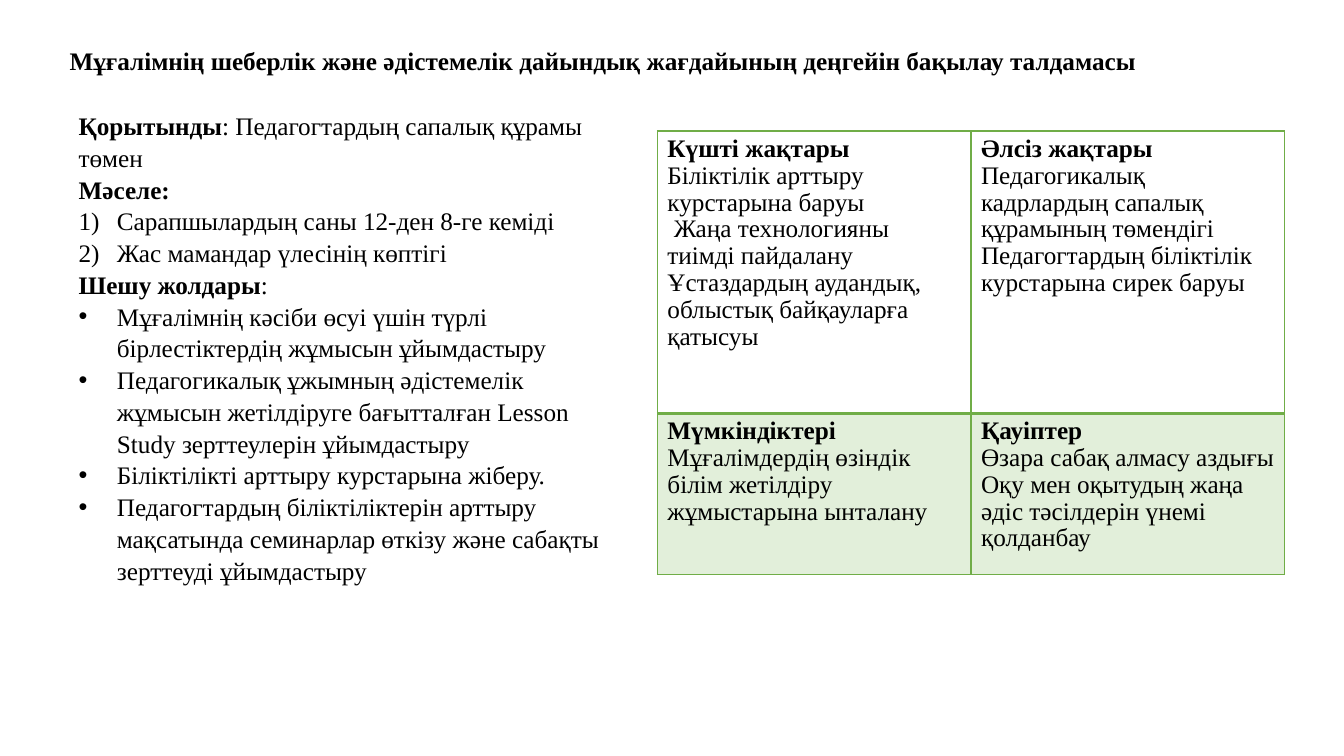
"""Builds a slide with findings on teacher skill levels and a four-part SWOT table."""
from lxml.etree import SubElement
from pptx import Presentation
from pptx.dml.color import RGBColor
from pptx.enum.text import MSO_ANCHOR, MSO_AUTO_SIZE, PP_ALIGN
from pptx.oxml import parse_xml
from pptx.oxml.ns import nsdecls, qn
from pptx.util import Inches, Pt

TITLE = "Мұғалімнің шеберлік және әдістемелік дайындық жағдайының деңгейін бақылау талдамасы"

FINDINGS = [
    ("plain", [("Қорытынды", True), (": Педагогтардың сапалық құрамы төмен", False)]),
    ("plain", [("Мәселе:", True)]),
    ("number", [("Сарапшылардың саны 12-ден 8-ге кеміді", False)]),
    ("number", [("Жас мамандар үлесінің көптігі", False)]),
    ("plain", [("Шешу жолдары", True), (":", False)]),
    ("bullet", [("Мұғалімнің кәсіби өсуі үшін түрлі бірлестіктердің жұмысын ұйымдастыру", False)]),
    ("bullet", [("Педагогикалық ұжымның әдістемелік жұмысын жетілдіруге бағытталған "
                 "Lesson Study зерттеулерін ұйымдастыру", False)]),
    ("bullet", [("Біліктілікті арттыру курстарына жіберу.", False)]),
    ("bullet", [("Педагогтардың біліктіліктерін арттыру мақсатында семинарлар өткізу "
                 "және сабақты зерттеуді ұйымдастыру", False)]),
]

SWOT = [
    [
        ("Күшті жақтары", [
            "Біліктілік арттыру курстарына баруы",
            " Жаңа технологияны тиімді пайдалану",
            "Ұстаздардың аудандық, облыстық байқауларға қатысуы",
        ]),
        ("Әлсіз жақтары", [
            "Педагогикалық кадрлардың сапалық құрамының төмендігі",
            "Педагогтардың біліктілік курстарына сирек баруы",
        ]),
    ],
    [
        ("Мүмкіндіктері", ["Мұғалімдердің өзіндік білім жетілдіру жұмыстарына ынталану"]),
        ("Қауіптер", [
            "Өзара сабақ алмасу аздығы",
            "Оқу мен оқытудың жаңа әдіс тәсілдерін үнемі қолданбау",
        ]),
    ],
]

FONT = "Times New Roman"
TEXT_SIZE = 18
BLACK, GREEN, PALE_GREEN = "000000", "70AD47", "E2EFDA"
ROW_HEIGHTS = (2.8, 1.6)
COLUMN_WIDTH = 3.11
INDENT = 0.38
MARKERS = {
    "plain": ("buNone", {}),
    "number": ("buAutoNum", {"type": "arabicParenR"}),
    "bullet": ("buChar", {"char": "•"}),
}


def color(value):
    return RGBColor.from_string(value)


def place(shape, left, top, width, height):
    shape.left, shape.top = Inches(left), Inches(top)
    shape.width, shape.height = Inches(width), Inches(height)


def write(paragraph, runs, line_spacing):
    paragraph.alignment = PP_ALIGN.LEFT
    paragraph.line_spacing = line_spacing
    paragraph.space_before = paragraph.space_after = Pt(0)
    for text, bold in runs:
        run = paragraph.add_run()
        run.text = text
        run.font.name, run.font.size, run.font.bold = FONT, Pt(TEXT_SIZE), bold
        run.font.color.rgb = color(BLACK)


def write_all(text_frame, lines, line_spacing):
    paragraphs = []
    for index, runs in enumerate(lines):
        paragraph = text_frame.add_paragraph() if index else text_frame.paragraphs[0]
        write(paragraph, runs, line_spacing)
        paragraphs.append(paragraph)
    return paragraphs


def set_marker(paragraph, kind):
    properties = paragraph._p.get_or_add_pPr()
    indent = 0 if kind == "plain" else Inches(INDENT)
    properties.set("marL", str(indent))
    properties.set("indent", str(-indent))
    if kind == "bullet":
        SubElement(properties, qn("a:buFont"), typeface="Arial")
    tag, attributes = MARKERS[kind]
    SubElement(properties, qn("a:" + tag), attributes)


def set_borders(cell, widths):
    properties = cell._tc.get_or_add_tcPr()
    for index, (side, width) in enumerate(zip("LRTB", widths)):
        properties.insert(index, parse_xml(
            f'<a:ln{side} {nsdecls("a")} w="{Pt(width)}"><a:solidFill>'
            f'<a:srgbClr val="{GREEN}"/></a:solidFill></a:ln{side}>'))


def add_title(slide):
    title = slide.shapes.title
    place(title, 0.59, 0.4, 12.15, 0.4)
    title.text_frame.auto_size = MSO_AUTO_SIZE.NONE
    title.text_frame.vertical_anchor = MSO_ANCHOR.TOP
    write_all(title.text_frame, [[(TITLE, True)]], 1.0)


def add_findings(slide):
    body = slide.placeholders[1]
    place(body, 0.68, 1.03, 5.57, 4.64)
    body.text_frame.auto_size = MSO_AUTO_SIZE.NONE
    paragraphs = write_all(body.text_frame, [runs for _, runs in FINDINGS], 1.05)
    for paragraph, (kind, _) in zip(paragraphs, FINDINGS):
        set_marker(paragraph, kind)


def add_swot(slide):
    frame = slide.shapes.add_table(
        len(SWOT), len(SWOT[0]), Inches(6.52), Inches(1.3),
        Inches(2 * COLUMN_WIDTH), Inches(sum(ROW_HEIGHTS)))
    table = frame.table
    table.first_row = table.horz_banding = False
    for column in table.columns:
        column.width = Inches(COLUMN_WIDTH)
    for row_index, (row, height) in enumerate(zip(SWOT, ROW_HEIGHTS)):
        table.rows[row_index].height = Inches(height)
        for column_index, (heading, points) in enumerate(row):
            cell = table.cell(row_index, column_index)
            lines = [[(heading, True)]] + [[(point, False)] for point in points]
            write_all(cell.text_frame, lines, 0.96)
            if row_index:
                cell.fill.solid()
                cell.fill.fore_color.rgb = color(PALE_GREEN)
                set_borders(cell, (1, 1, 2, 1))
            else:
                cell.fill.background()
                set_borders(cell, (1, 1, 1, 2))


def main():
    presentation = Presentation()
    presentation.slide_width, presentation.slide_height = Inches(13.33), Inches(7.5)
    slide = presentation.slides.add_slide(presentation.slide_layouts[1])
    add_title(slide)
    add_swot(slide)
    add_findings(slide)
    presentation.save("out.pptx")


if __name__ == "__main__":
    main()
